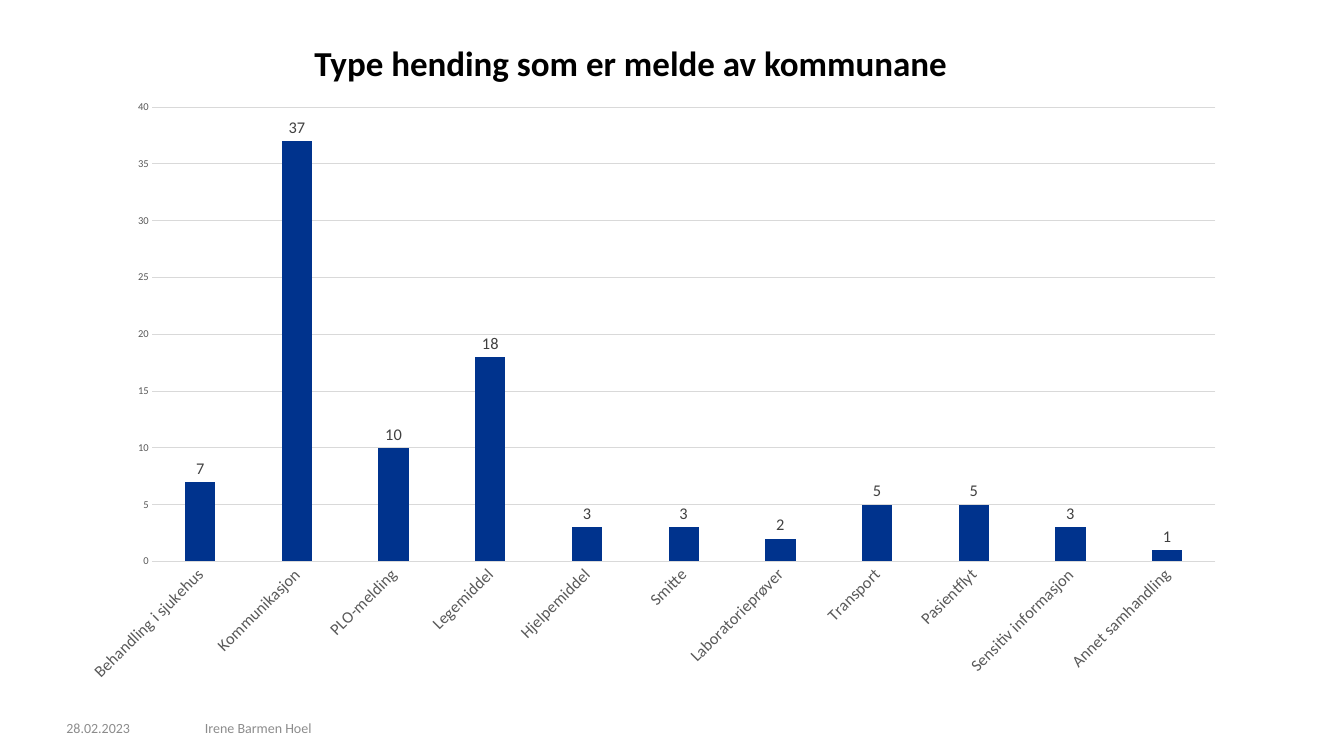
from lxml import etree
from pptx import Presentation
from pptx import util as u
from pptx.chart.data import CategoryChartData
from pptx.dml.color import RGBColor
from pptx.enum import chart as ch, text
from pptx.oxml.ns import qn

FONT = "Calibri"
BLACK = RGBColor(0x00, 0x00, 0x00)
NAVY = RGBColor(0x00, 0x33, 0x8D)
LABEL_GREY = RGBColor(0x40, 0x40, 0x40)
AXIS_GREY = RGBColor(0x59, 0x59, 0x59)
FOOTER_GREY = RGBColor(0x8C, 0x8C, 0x8C)
GRID_GREY = RGBColor(0xD9, 0xD9, 0xD9)

INCIDENTS = {
    "Behandling i sjukehus": 7,
    "Kommunikasjon": 37,
    "PLO-melding": 10,
    "Legemiddel": 18,
    "Hjelpemiddel": 3,
    "Smitte": 3,
    "Laboratorieprøver": 2,
    "Transport": 5,
    "Pasientflyt": 5,
    "Sensitiv informasjon": 3,
    "Annet samhandling": 1,
}


def style_font(font, size, color, bold=False):
    font.name = FONT
    font.size = u.Pt(size)
    font.bold = bold
    font.color.rgb = color


def write(frame, words, size, color, bold=False, align=text.PP_ALIGN.LEFT,
          anchor=text.MSO_ANCHOR.MIDDLE, spacing=None):
    frame.word_wrap = True
    frame.auto_size = text.MSO_AUTO_SIZE.NONE
    frame.vertical_anchor = anchor
    frame.margin_left = frame.margin_right = 0
    frame.margin_top = frame.margin_bottom = 0
    paragraph = frame.paragraphs[0]
    paragraph.alignment = align
    paragraph.line_spacing = spacing
    run = paragraph.add_run()
    run.text = words
    style_font(run.font, size, color, bold)


def style_line(line, color):
    line.color.rgb = color
    line.width = u.Pt(0.75)


def add_title(slide, left, top, width, height):
    title = slide.shapes.title
    title.left, title.top = u.Inches(left), u.Inches(top)
    title.width, title.height = u.Inches(width), u.Inches(height)
    write(title.text_frame, "Type hending som er melde av kommunane", 30, BLACK,
          bold=True, align=text.PP_ALIGN.CENTER, anchor=text.MSO_ANCHOR.TOP,
          spacing=u.Pt(32))


def add_footer(slide, left, top, width, height):
    author_offset = 1.65
    for words, offset, part_width in (
            ("28.02.2023", 0, 1.26),
            ("Irene Barmen Hoel", author_offset, width - author_offset)):
        box = slide.shapes.add_textbox(u.Inches(left + offset), u.Inches(top),
                                       u.Inches(part_width), u.Inches(height))
        write(box.text_frame, words, 12, FOOTER_GREY)


def set_plot_layout(plot_area, **fractions):
    for old in plot_area.findall(qn("c:layout")):
        plot_area.remove(old)
    layout = etree.Element(qn("c:layout"))
    manual = etree.SubElement(layout, qn("c:manualLayout"))
    settings = {"layoutTarget": "inner", "xMode": "edge", "yMode": "edge", **fractions}
    for tag, value in settings.items():
        etree.SubElement(manual, qn(f"c:{tag}")).set("val", str(value))
    plot_area.insert(0, layout)


def add_incident_chart(slide, left, top, width, height):
    data = CategoryChartData()
    data.categories = list(INCIDENTS)
    data.add_series("Series 1", list(INCIDENTS.values()))
    chart = slide.shapes.add_chart(
        ch.XL_CHART_TYPE.COLUMN_CLUSTERED, u.Inches(left), u.Inches(top),
        u.Inches(width), u.Inches(height), data).chart
    chart.has_title = False
    chart.has_legend = False
    style_font(chart.font, 10, BLACK)

    # Columns and their values
    plot = chart.plots[0]
    plot.vary_by_categories = False
    plot.gap_width = 219
    plot.overlap = -27
    columns = plot.series[0]
    columns.format.fill.solid()
    columns.format.fill.fore_color.rgb = NAVY
    labels = columns.data_labels
    labels.show_value = True
    labels.position = ch.XL_LABEL_POSITION.OUTSIDE_END
    style_font(labels.font, 14, LABEL_GREY)

    # Axes and gridlines
    incident_axis, count_axis = chart.category_axis, chart.value_axis
    for axis, size in ((incident_axis, 14), (count_axis, 9)):
        axis.major_tick_mark = axis.minor_tick_mark = ch.XL_TICK_MARK.NONE
        style_font(axis.tick_labels.font, size, AXIS_GREY)
    style_line(incident_axis.format.line, GRID_GREY)
    count_axis.format.line.fill.background()
    count_axis.minimum_scale, count_axis.maximum_scale = 0, 40
    count_axis.major_unit = 5
    count_axis.has_major_gridlines = True
    style_line(count_axis.major_gridlines.format.line, GRID_GREY)

    # Slanted category names below a fixed plot area
    slant = chart.element.xpath(".//c:catAx/c:txPr/a:bodyPr")[0]
    slant.set("rot", "-2700000")
    slant.set("vert", "horz")
    set_plot_layout(chart.element.xpath(".//c:plotArea")[0],
                    x=0.073, y=0.03, w=0.907, h=0.75)


def main():
    deck = Presentation()
    deck.slide_width, deck.slide_height = u.Inches(16), u.Inches(9)
    slide = deck.slides.add_slide(deck.slide_layouts[5])
    add_footer(slide, 0.79, 8.54, 11.42, 0.24)
    add_title(slide, 0.79, 0.55, 13.44, 0.57)
    add_incident_chart(slide, 0.79, 1.06, 13.96, 7.21)
    deck.save("out.pptx")


if __name__ == "__main__":
    main()
